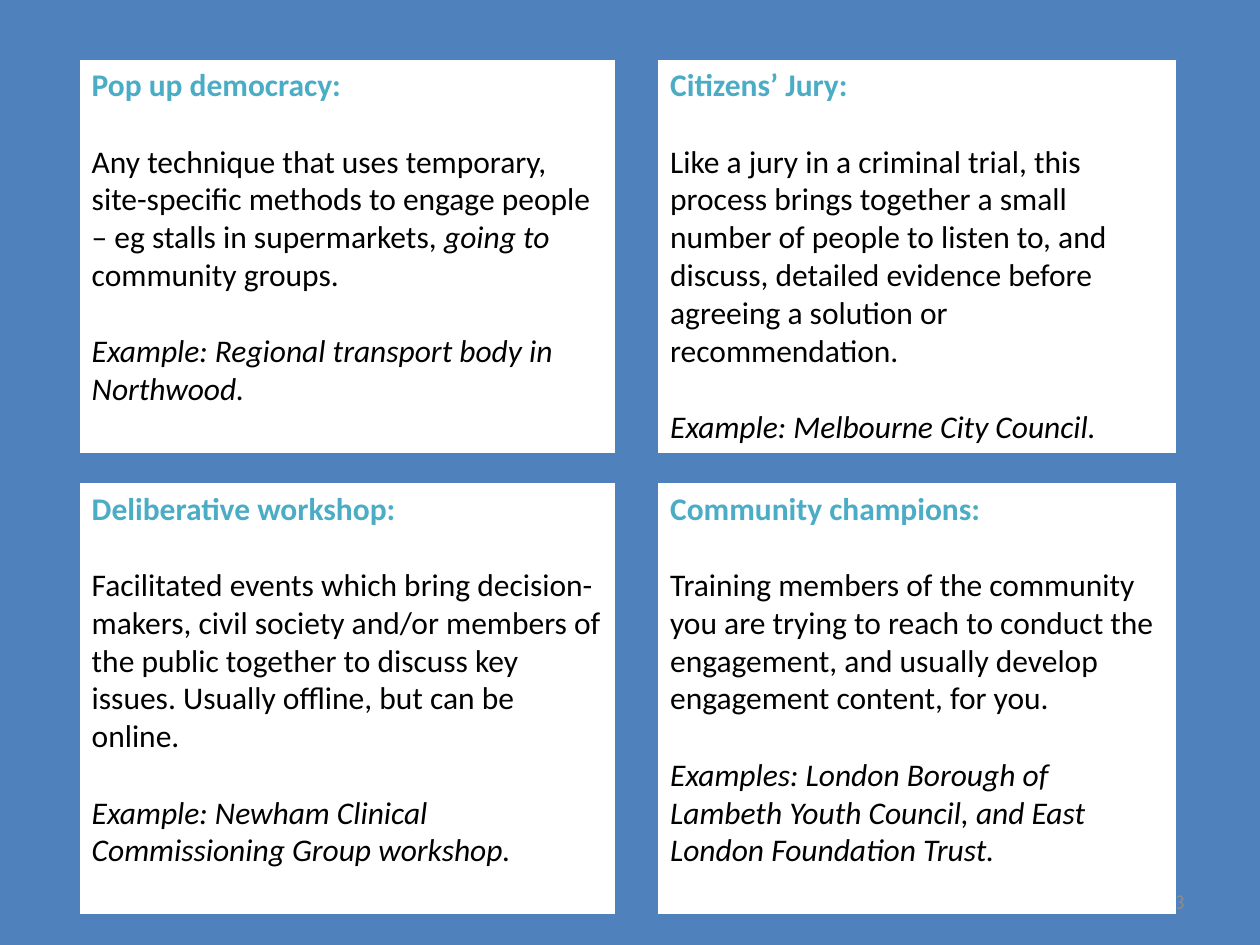
from dataclasses import dataclass

from pptx import Presentation
from pptx.dml.color import RGBColor
from pptx.enum.shapes import MSO_SHAPE
from pptx.enum.text import MSO_ANCHOR, PP_ALIGN
from pptx.slide import Slide
from pptx.util import Inches, Pt

BLUE = "4F81BD"
TEAL = "4BACC6"
WHITE = "FFFFFF"
BLACK = "000000"
GREY = "8C8C8C"
COLUMNS = ((0.63, 4.26), (5.22, 4.12))
ROWS = ((0.47, 3.13), (3.83, 3.43))


@dataclass
class Run:
    text: str
    italic: bool = False


@dataclass
class Method:
    title: str
    description: list[Run]
    example: str


METHODS = [
    Method(
        "Pop up democracy:",
        [
            Run("Any technique that uses temporary, site-specific methods to engage "
                "people – eg stalls in supermarkets, "),
            Run("going to ", italic=True),
            Run("community groups."),
        ],
        "Example: Regional transport body in Northwood.",
    ),
    Method(
        "Citizens’ Jury:",
        [Run("Like a jury in a criminal trial, this process brings together a small "
             "number of people to listen to, and discuss, detailed evidence before "
             "agreeing a solution or recommendation.")],
        "Example: Melbourne City Council.",
    ),
    Method(
        "Deliberative workshop:",
        [Run("Facilitated events which bring decision-makers, civil society and/or "
             "members of the public together to discuss key issues. Usually offline, "
             "but can be online.")],
        "Example: Newham Clinical Commissioning Group workshop.",
    ),
    Method(
        "Community champions:",
        [Run("Training members of the community you are trying to reach to conduct "
             "the engagement, and usually develop engagement content, for you.")],
        "Examples: London Borough of Lambeth Youth Council, and East London "
        "Foundation Trust.",
    ),
]


def rgb(value: str) -> RGBColor:
    return RGBColor.from_string(value)


def add_run(p, run: Run, color: str, size: int = 18, bold: bool = False) -> None:
    r = p.add_run()
    r.text = run.text
    r.font.name = "Calibri"
    r.font.size = Pt(size)
    r.font.bold = bold
    r.font.italic = run.italic
    r.font.color.rgb = rgb(color)


def add_page_number(s: Slide, number: str) -> None:
    sp = s.shapes.add_textbox(Inches(7.17), Inches(6.95), Inches(2.33), Inches(0.4))
    tf = sp.text_frame
    tf.word_wrap = True
    tf.vertical_anchor = MSO_ANCHOR.MIDDLE
    p = tf.paragraphs[0]
    p.alignment = PP_ALIGN.RIGHT
    add_run(p, Run(number), GREY, size=12)


def add_card(s: Slide, method: Method, column: tuple[float, float],
             row: tuple[float, float]) -> None:
    left, width = column
    top, height = row
    sp = s.shapes.add_shape(MSO_SHAPE.RECTANGLE, Inches(left), Inches(top),
                            Inches(width), Inches(height))
    sp.shadow.inherit = False
    sp.fill.solid()
    sp.fill.fore_color.rgb = rgb(WHITE)
    sp.line.color.rgb = rgb(BLUE)
    sp.line.width = Pt(0.75)
    tf = sp.text_frame
    tf.word_wrap = True
    tf.vertical_anchor = MSO_ANCHOR.TOP

    p = tf.paragraphs[0]
    p.alignment = PP_ALIGN.LEFT
    add_run(p, Run(method.title), TEAL, bold=True)
    for runs in (method.description, [Run(method.example, italic=True)]):
        p = tf.add_paragraph()
        p.alignment = PP_ALIGN.LEFT
        p.space_before = Pt(22)
        for run in runs:
            add_run(p, run, BLACK)


def main() -> None:
    prs = Presentation()
    prs.slide_width = Inches(10)
    prs.slide_height = Inches(7.5)
    s = prs.slides.add_slide(prs.slide_layouts[6])
    s.background.fill.solid()
    s.background.fill.fore_color.rgb = rgb(BLUE)
    add_page_number(s, "13")
    for i, method in enumerate(METHODS):
        add_card(s, method, COLUMNS[i % 2], ROWS[i // 2])
    prs.save("out.pptx")


if __name__ == "__main__":
    main()
